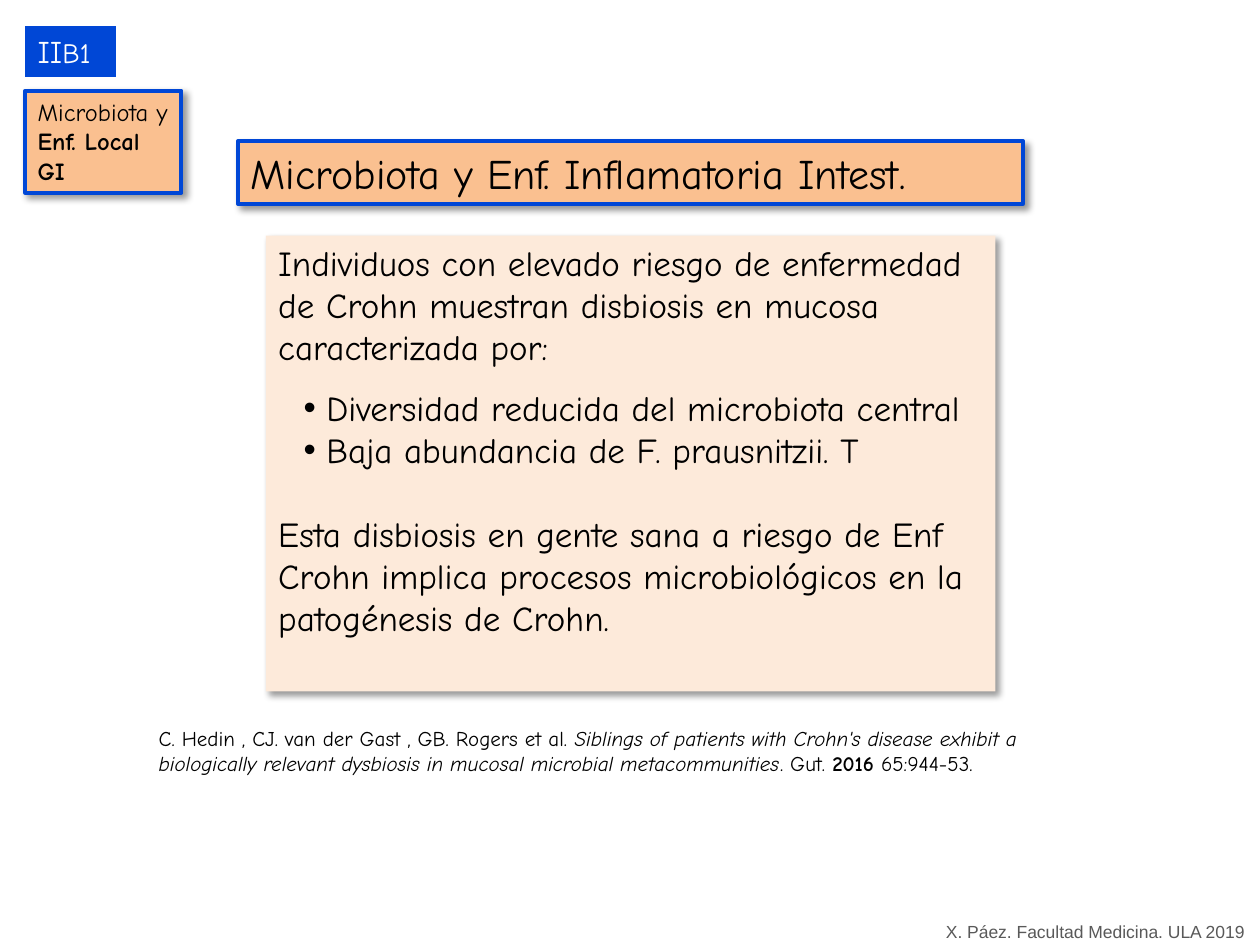
from lxml import etree
from pptx import Presentation
from pptx import util as u
from pptx.dml.color import RGBColor
from pptx.enum import shapes, text
from pptx.oxml.ns import qn

BLACK = RGBColor(0x00, 0x00, 0x00)
WHITE = RGBColor(0xFF, 0xFF, 0xFF)
GREY = RGBColor(0x59, 0x59, 0x59)
BLUE = RGBColor(0x00, 0x47, 0xD6)
ORANGE = RGBColor(0xFA, 0xC0, 0x90)
CREAM = RGBColor(0xFD, 0xEA, 0xDA)


def add_text(paragraph, words, size, font="Comic Neue", color=BLACK, bold=False, italic=False):
    run = paragraph.add_run()
    run.text = words
    run.font.name = font
    run.font.size = u.Pt(size)
    run.font.color.rgb = color
    run.font.bold = bold
    run.font.italic = italic


def add_bullet(paragraph):
    properties = paragraph._p.get_or_add_pPr()
    properties.set("marL", str(u.Cm(0.97)))
    properties.set("indent", str(u.Cm(-0.46)))
    font = etree.SubElement(properties, qn("a:buFont"))
    font.set("typeface", "Arial")
    etree.SubElement(properties, qn("a:buChar")).set("char", "•")


def add_shadow(shape):
    effects = shape._element.spPr.find(qn("a:effectLst"))
    shadow = etree.SubElement(effects, qn("a:outerShdw"), blurRad=str(u.Pt(4)),
                              dist=str(u.Pt(3)), dir=str(45 * 60000),
                              algn="tl", rotWithShape="0")
    color = etree.SubElement(shadow, qn("a:srgbClr"), val=str(BLACK))
    etree.SubElement(color, qn("a:alpha"), val="40000")


class SlideBuilder:
    """Holds the current slide and the style its elements share."""

    line_width = u.Pt(2.25)

    def __init__(self, presentation):
        self.slide = presentation.slides.add_slide(presentation.slide_layouts[5])

    def prepare_frame(self, shape, wrap=True):
        """Sets up the text frame and returns its first paragraph."""
        frame = shape.text_frame
        frame.word_wrap = wrap
        frame.auto_size = text.MSO_AUTO_SIZE.NONE
        frame.vertical_anchor = text.MSO_ANCHOR.TOP
        paragraph = frame.paragraphs[0]
        paragraph.alignment = text.PP_ALIGN.LEFT
        return paragraph

    def paint(self, shape, fill, line=None, shadow=True):
        shape.fill.solid()
        shape.fill.fore_color.rgb = fill
        if line is None:
            shape.line.fill.background()
        else:
            shape.line.color.rgb = line
            shape.line.width = self.line_width
        shape.shadow.inherit = False
        if shadow:
            add_shadow(shape)

    def title(self, words, left, top, width, height):
        shape = self.slide.shapes.title
        shape.left, shape.top = u.Cm(left), u.Cm(top)
        shape.width, shape.height = u.Cm(width), u.Cm(height)
        self.paint(shape, ORANGE, BLUE)
        add_text(self.prepare_frame(shape), words, 24)

    def box(self, left, top, width, height, **paint):
        shape = self.slide.shapes.add_shape(
            shapes.MSO_SHAPE.RECTANGLE, u.Cm(left), u.Cm(top), u.Cm(width), u.Cm(height))
        self.paint(shape, **paint)
        return self.prepare_frame(shape)

    def text_box(self, left, top, width, height, wrap=True):
        shape = self.slide.shapes.add_textbox(u.Cm(left), u.Cm(top), u.Cm(width), u.Cm(height))
        return self.prepare_frame(shape, wrap)

    def body(self, paragraphs, left, top, width, height):
        """Each paragraph is (words, bulleted, space before in points)."""
        paragraph = self.box(left, top, width, height, fill=CREAM)
        frame = paragraph._parent
        for index, (words, bulleted, space) in enumerate(paragraphs):
            if index:
                paragraph = frame.add_paragraph()
                paragraph.alignment = text.PP_ALIGN.LEFT
                paragraph.space_before = u.Pt(space)
            if bulleted:
                add_bullet(paragraph)
            add_text(paragraph, words, 20)


def main():
    presentation = Presentation()
    presentation.slide_width, presentation.slide_height = u.Cm(25.4), u.Cm(19.05)
    builder = SlideBuilder(presentation)

    builder.body([
        ("Individuos con elevado riesgo de enfermedad de Crohn muestran disbiosis "
         "en mucosa caracterizada por:", False, 0),
        ("Diversidad reducida del microbiota central", True, 10.8),
        ("Baja abundancia de F. prausnitzii. T", True, 0),
        ("Esta disbiosis en gente sana a riesgo de Enf Crohn implica procesos "
         "microbiológicos en la patogénesis de Crohn.", False, 24),
    ], 5.36, 4.75, 14.71, 9.19)

    citation = builder.text_box(2.95, 14.5, 19.2, 1.27)
    add_text(citation, "C. Hedin , CJ. van der Gast , GB. Rogers et al. ", 12)
    add_text(citation, "Siblings of patients with Crohn's disease exhibit a biologically "
             "relevant dysbiosis in mucosal microbial metacommunities", 12, italic=True)
    add_text(citation, ". Gut. ", 12)
    add_text(citation, "2016", 12, bold=True)
    add_text(citation, " 65:944-53.", 12)

    builder.title("Microbiota y Enf. Inflamatoria Intest.", 4.8, 2.84, 15.82, 1.27)

    credit = builder.text_box(18.82, 18.44, 6.58, 0.69, wrap=False)
    add_text(credit, "X. Páez. Facultad Medicina. ULA 2019", 10, font="Arial", color=GREY)

    section = builder.box(0.51, 0.53, 1.83, 1.02, fill=BLUE, shadow=False)
    add_text(section, "II", 18, color=WHITE)
    add_text(section, "B1", 16, color=WHITE)

    topic = builder.box(0.51, 1.83, 3.15, 2.06, fill=ORANGE, line=BLUE)
    add_text(topic, "Microbiota y ", 14)
    add_text(topic, "Enf. Local GI", 14, bold=True)

    presentation.save("out.pptx")


if __name__ == "__main__":
    main()
